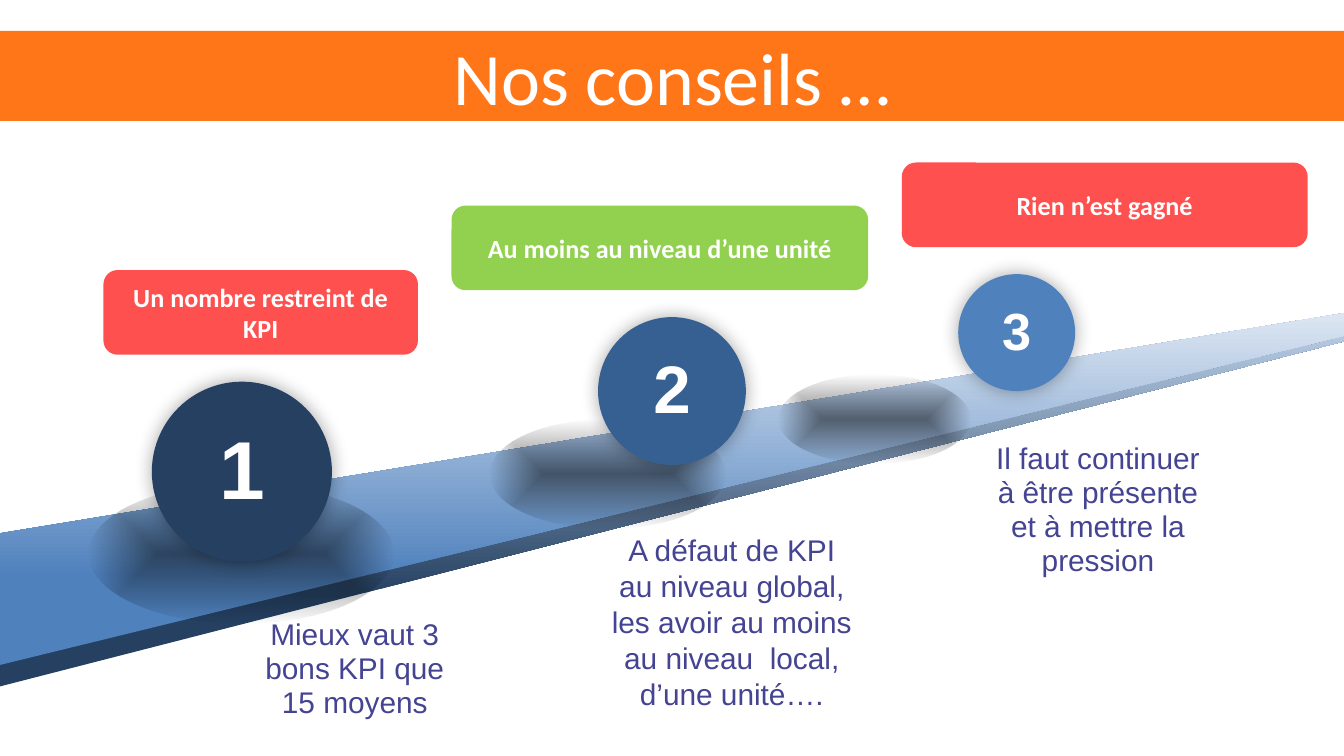
import pptx
import pptx.util
import pptx.oxml
import pptx.oxml.ns
import pptx.dml.color
import pptx.enum.shapes
import pptx.enum.text

Inches = pptx.util.Inches
Pt = pptx.util.Pt
KIND = pptx.enum.shapes.MSO_SHAPE
ANCHOR = pptx.enum.text.MSO_ANCHOR
CENTER = pptx.enum.text.PP_ALIGN.CENTER

HEX = {
    "orange": "FF7619", "red": "FF5050", "green": "92D050",
    "white": "FFFFFF", "black": "000000", "violet": "444492",
    "navy": "254061", "steel": "376092", "blue": "4F81BD",
    "mist": "B9CDE5", "pale": "DCE6F2",
}

TITLE = "Nos conseils …"
# Corner points, lower colour, upper colour
RAMP = [
    ([(10, 2.43), (10, 2.54), (-0.01, 5.11), (-0.01, 4.11)], "navy", "mist"),
    ([(10, 2.33), (10, 2.5), (-0.01, 4.95), (-0.01, 3.97)], "blue", "pale"),
]
# Boxes are left, top, width, height
STEPS = [
    {"shade": (0.66, 3.6, 2.27, 1.04), "ball": (1.13, 2.84, 1.34, 1.34),
     "color": "navy", "size": 44,
     "label": "Un nombre restreint de KPI",
     "tag": (0.77, 2.01, 2.34, 0.63), "tint": "red",
     "advice": "Mieux vaut 3 bons KPI que 15 moyens",
     "note": (1.83, 4.6, 1.74, 0.91), "gaps": {"line": 0.95, "after": 8}},
    {"shade": (3.64, 3.12, 1.76, 0.81), "ball": (4.45, 2.36, 1.1, 1.1),
     "color": "steel", "size": 36,
     "label": "Au moins au niveau d’une unité",
     "tag": (3.36, 1.53, 3.1, 0.63), "tint": "green",
     "advice": "A défaut de KPI au niveau global, les avoir au moins "
               "au niveau  local, d’une unité….",
     "note": (4.55, 3.96, 1.91, 1.44), "gaps": {}},
    {"shade": (5.79, 2.79, 1.43, 0.66), "ball": (7.13, 2.04, 0.87, 0.87),
     "color": "blue", "size": 28,
     "label": "Rien n’est gagné",
     "tag": (6.71, 1.21, 3.02, 0.63), "tint": "red",
     "advice": "Il faut continuer à être présente et à mettre la pression",
     "note": (7.35, 3.29, 1.76, 1.27), "gaps": {"line": 0.95, "after": 8}},
]


def rgb(name):
    return pptx.dml.color.RGBColor.from_string(HEX[name])


def black(alpha):
    return (f'<a:srgbClr val="{HEX["black"]}">'
            f'<a:alpha val="{alpha * 1000}"/></a:srgbClr>')


def add_xml(shape, tag, body):
    """Append a drawing element to the shape's properties."""
    space = pptx.oxml.ns.nsdecls("a")
    node = pptx.oxml.parse_xml(f"<a:{tag} {space}>{body}</a:{tag}>")
    shape.element.spPr.append(node)


def add_shape(slide, kind, box, fill=None):
    shape = slide.shapes.add_shape(kind, *map(Inches, box))
    shape.shadow.inherit = False
    shape.line.fill.background()
    if fill:
        shape.fill.solid()
        shape.fill.fore_color.rgb = rgb(fill)
    return shape


def put_text(shape, text, size, font="Arial", color="white", bold=False,
             insets=(0, 0, 0, 0), anchor=ANCHOR.MIDDLE, line=None, after=None):
    frame = shape.text_frame
    frame.word_wrap = True
    frame.vertical_anchor = anchor
    (frame.margin_left, frame.margin_top,
     frame.margin_right, frame.margin_bottom) = map(Inches, insets)
    para = frame.paragraphs[0]
    para.alignment = CENTER
    if line:
        para.line_spacing = line
    if after:
        para.space_after = Pt(after)
    run = para.add_run()
    run.text = text
    run.font.size = Pt(size)
    run.font.name = font
    run.font.bold = bold
    run.font.color.rgb = rgb(color)


def add_ramp(slide, points, low, high):
    spots = [(Inches(x), Inches(y)) for x, y in points]
    pen = slide.shapes.build_freeform(*spots[0])
    pen.add_line_segments(spots[1:], close=True)
    shape = pen.convert_to_shape()
    shape.shadow.inherit = False
    shape.line.fill.background()
    shape.fill.gradient()
    shape.fill.gradient_angle = 90
    for stop, place, color in zip(shape.fill.gradient_stops,
                                  (0.25, 1), (low, high)):
        stop.position = place
        stop.color.rgb = rgb(color)


def add_shade(slide, box):
    """Draw a soft dark ellipse that fades out from its centre."""
    shape = add_shape(slide, KIND.OVAL, box)
    stops = "".join(f'<a:gs pos="{place}">{black(alpha)}</a:gs>'
                    for place, alpha in ((0, 50), (100000, 0)))
    add_xml(shape, "gradFill", f'<a:gsLst>{stops}</a:gsLst><a:path path="shape">'
            '<a:fillToRect l="50000" t="50000" r="50000" b="50000"/></a:path>')
    # The fill has to stand between the geometry and the line
    props = shape.element.spPr
    props.insert(2, props[-1])


def add_ball(slide, number, step):
    shape = add_shape(slide, KIND.OVAL, step["ball"], step["color"])
    props = shape.element.spPr
    props.remove(props.find(pptx.oxml.ns.qn("a:effectLst")))
    add_xml(shape, "effectLst",
            f'<a:outerShdw blurRad="{Pt(10)}" dist="0" dir="18900000" '
            f'algn="ctr" rotWithShape="0">{black(35)}</a:outerShdw>')
    put_text(shape, str(number), step["size"], bold=True, line=0.95, after=8)


def main():
    deck = pptx.Presentation()
    deck.slide_width = Inches(10)
    deck.slide_height = deck.slide_width * 9 // 16
    slide = deck.slides.add_slide(deck.slide_layouts[6])

    banner = add_shape(slide, KIND.RECTANGLE, (0, 0.23, 10, 0.67), "orange")
    put_text(banner, TITLE, 39.6, font="Calibri")

    for points, low, high in RAMP:
        add_ramp(slide, points, low, high)

    for number, step in enumerate(STEPS, 1):
        add_shade(slide, step["shade"])
        add_ball(slide, number, step)

    for step in STEPS:
        tag = add_shape(slide, KIND.ROUNDED_RECTANGLE, step["tag"], step["tint"])
        put_text(tag, step["label"], 14, font="Calibri", bold=True,
                 insets=(0.04,) * 4)
        note = slide.shapes.add_textbox(*map(Inches, step["note"]))
        put_text(note, step["advice"], 16, color="violet",
                 insets=(0, 0, 0.12, 0), anchor=ANCHOR.TOP, **step["gaps"])

    deck.save("out.pptx")


if __name__ == "__main__":
    main()
